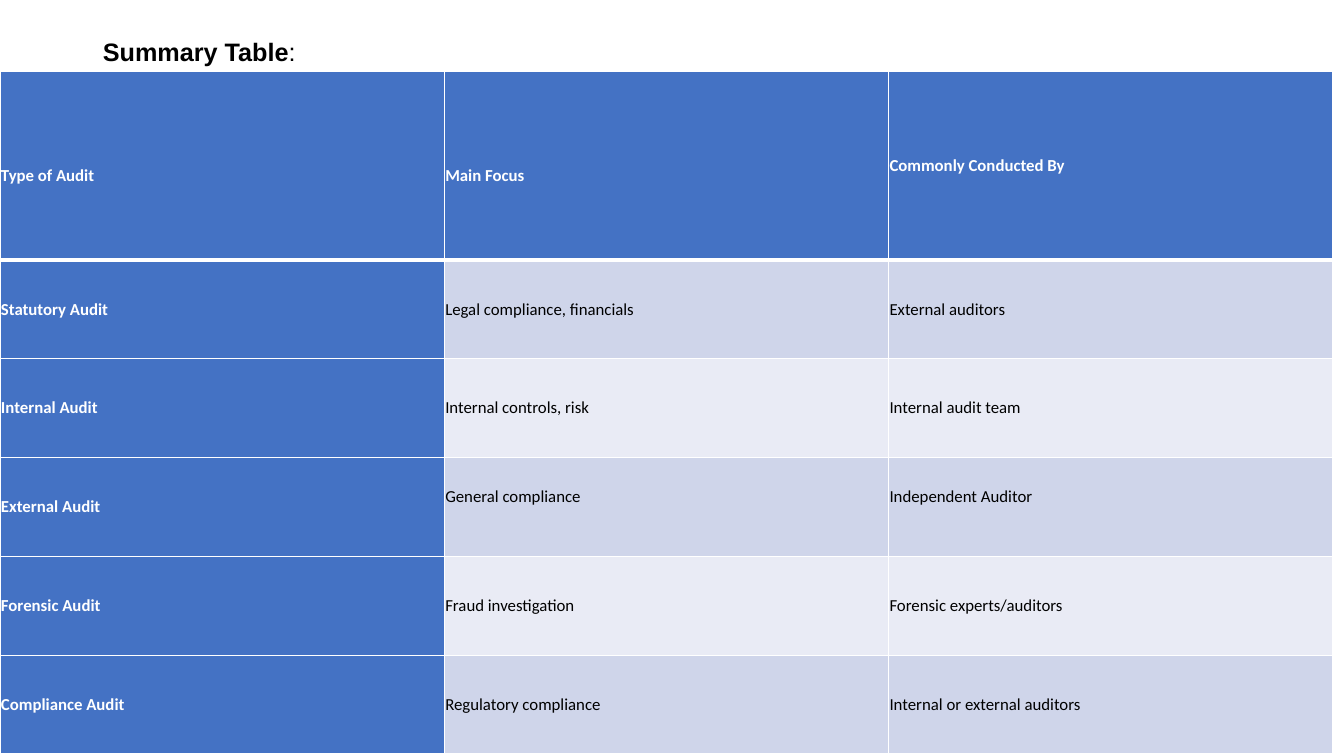
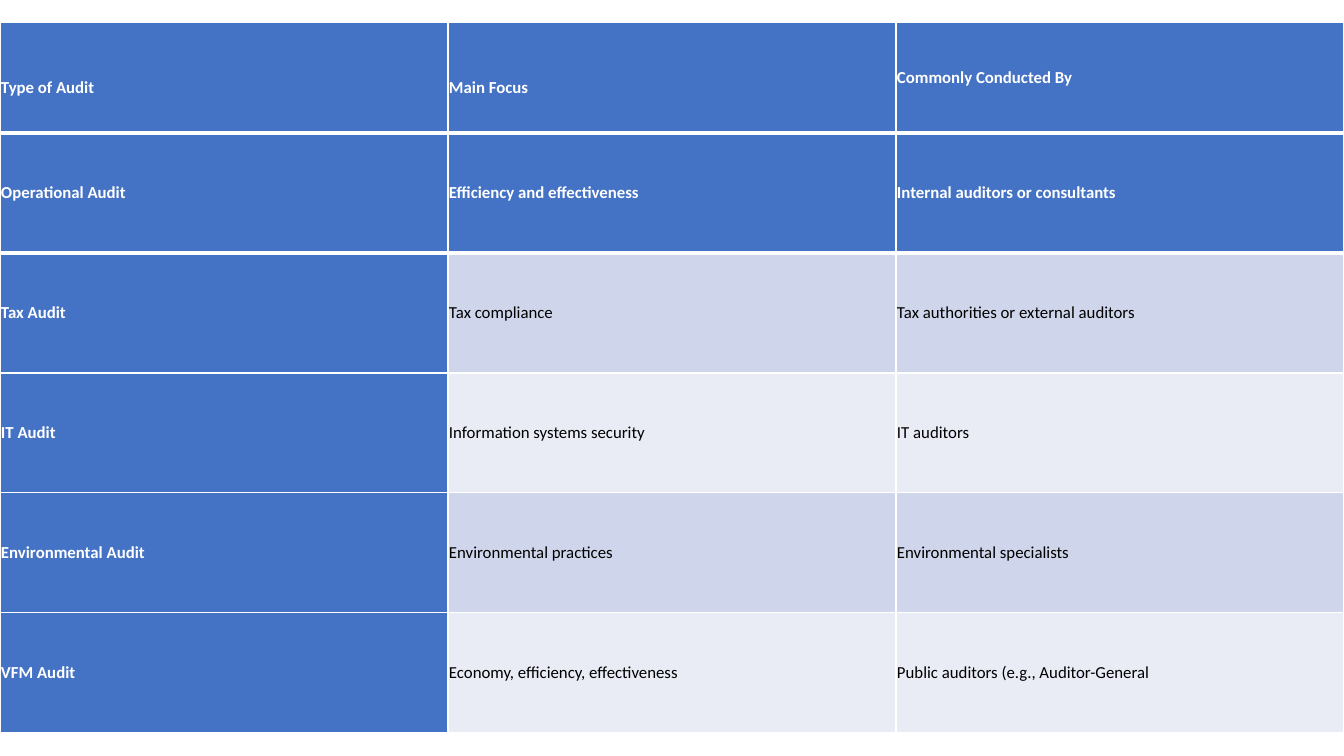
from dataclasses import dataclass

from lxml.etree import SubElement
from pptx import Presentation
from pptx.dml.color import RGBColor
from pptx.enum.text import MSO_ANCHOR, MSO_AUTO_SIZE, PP_ALIGN
from pptx.oxml.ns import qn
from pptx.util import Inches, Pt


@dataclass(frozen=True)
class Theme:
    accent: str = "4472C4"
    bands: tuple = ("CFD5EA", "E9EBF5")
    light: str = "FFFFFF"
    dark: str = "000000"
    title_font: str = "Arial"
    table_font: str = "Calibri"
    title_size: int = 18
    table_size: int = 12
    thin: int = 1
    thick: int = 3


THEME = Theme()
CELL_INSET = 0.01
TEXT_SHIFT = 0.2  # extra inset that moves centred text by half a line

TITLE = ("Summary Table", ":")
HEADINGS = ("Type of Audit", "Main Focus", "Commonly Conducted By")
GENERAL_AUDITS = [
    ("Statutory Audit", "Legal compliance, financials", "External auditors"),
    ("Internal Audit", "Internal controls, risk", "Internal audit team"),
    ("External Audit", "General compliance", "Independent Auditor"),
    ("Forensic Audit", "Fraud investigation", "Forensic experts/auditors"),
    ("Compliance Audit", "Regulatory compliance", "Internal or external auditors"),
]
SPECIAL_AUDITS = [
    ("Operational Audit", "Efficiency and effectiveness", "Internal auditors or consultants"),
    ("Tax Audit", "Tax compliance", "Tax authorities or external auditors"),
    ("IT Audit", "Information systems security", "IT auditors"),
    ("Environmental Audit", "Environmental practices", "Environmental specialists"),
    ("VFM Audit", "Economy, efficiency, effectiveness", "Public auditors (e.g., Auditor-General"),
]
LOWERED = {"Type of Audit", "Main Focus"}
RAISED = {"General compliance", "Independent Auditor"}


def rgb(code):
    return RGBColor.from_string(code)


def set_borders(cell, top, bottom):
    """Draw light borders; top and bottom are widths in points."""
    properties = cell._tc.get_or_add_tcPr()
    widths = {"a:lnL": THEME.thin, "a:lnR": THEME.thin, "a:lnT": top, "a:lnB": bottom}
    for tag, width in widths.items():
        line = SubElement(properties, qn(tag), w=str(Pt(width)))
        fill = SubElement(line, qn("a:solidFill"))
        SubElement(fill, qn("a:srgbClr"), val=THEME.light)


def fill_cell(cell, text, row, column):
    is_label = row == 0 or column == 0
    set_borders(cell,
                top=THEME.thick if row == 1 else THEME.thin,
                bottom=THEME.thick if row == 0 else THEME.thin)
    cell.fill.solid()
    cell.fill.fore_color.rgb = rgb(THEME.accent if is_label else THEME.bands[(row - 1) % 2])
    cell.vertical_anchor = MSO_ANCHOR.MIDDLE
    cell.margin_left = cell.margin_right = Inches(CELL_INSET)
    cell.margin_top = Inches(CELL_INSET + TEXT_SHIFT * (text in LOWERED))
    cell.margin_bottom = Inches(CELL_INSET + TEXT_SHIFT * (text in RAISED))
    cell.text = text
    font = cell.text_frame.paragraphs[0].font
    font.name, font.size, font.bold = THEME.table_font, Pt(THEME.table_size), is_label
    font.color.rgb = rgb(THEME.light if is_label else THEME.dark)


def add_audit_table(page, rows, top, width, heights):
    columns = len(HEADINGS)
    table = page.shapes.add_table(len(rows), columns, 0, Inches(top),
                                  Inches(width), Inches(sum(heights))).table
    table.horz_banding = False
    for column in table.columns:
        column.width = Inches(width / columns)
    for index, (texts, height) in enumerate(zip(rows, heights)):
        table.rows[index].height = Inches(height)
        for column, text in enumerate(texts):
            fill_cell(table.cell(index, column), text, index, column)


def set_title(page):
    box = page.shapes.title
    box.left, box.top, box.width, box.height = map(Inches, (0.92, 0.31, 11.5, 0.4))
    frame = box.text_frame
    frame.auto_size = MSO_AUTO_SIZE.NONE
    frame.vertical_anchor = MSO_ANCHOR.TOP
    para = frame.paragraphs[0]
    para.alignment = PP_ALIGN.LEFT
    para.font.name, para.font.size = THEME.title_font, Pt(THEME.title_size)
    para.font.color.rgb = rgb(THEME.dark)
    for text, bold in zip(TITLE, (True, False)):
        span = para.add_run()
        span.text, span.font.bold = text, bold


def main():
    deck = Presentation()
    deck.slide_width, deck.slide_height = Inches(13.33), Inches(7.5)
    title_only, blank = deck.slide_layouts[5], deck.slide_layouts[6]

    page = deck.slides.add_slide(title_only)
    set_title(page)
    add_audit_table(page, [HEADINGS, *GENERAL_AUDITS], 0.71, 13.22, [1.87] + [0.98] * 5)

    page = deck.slides.add_slide(blank)
    add_audit_table(page, SPECIAL_AUDITS, 1.32, 13.33, [1.19] * 5)
    add_audit_table(page, [HEADINGS], 0.22, 13.33, [1.1])

    deck.save("out.pptx")


if __name__ == "__main__":
    main()
